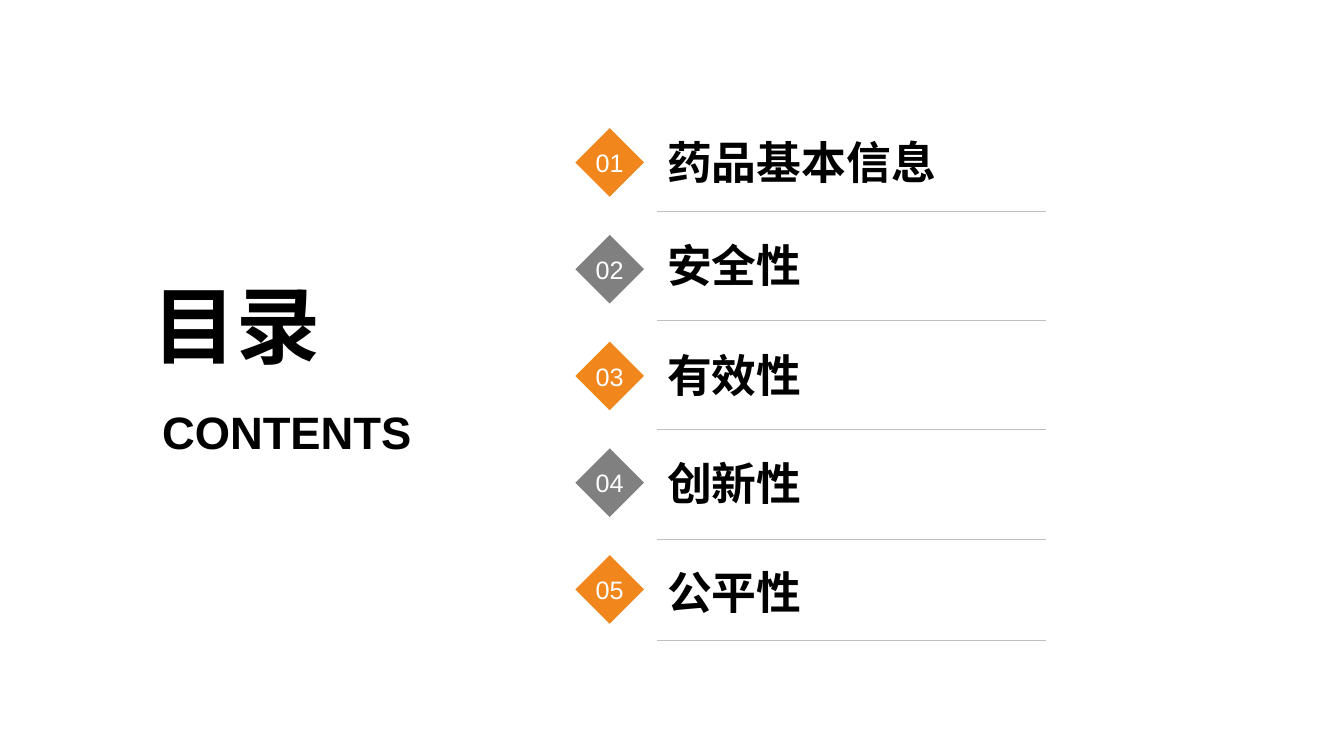
import pptx
import pptx.dml.color
import pptx.enum.shapes
import pptx.enum.text
import pptx.util
from pptx.util import Cm

ALIGN = pptx.enum.text.PP_ALIGN
ANCHOR = pptx.enum.text.MSO_ANCHOR


def color(value):
    return pptx.dml.color.RGBColor.from_string(value)


def write(shape, text, size, fill="000000", bold=True, align=ALIGN.LEFT, anchor=ANCHOR.TOP, wrap=True):
    frame = shape.text_frame
    frame.word_wrap = wrap
    frame.vertical_anchor = anchor
    paragraph = frame.paragraphs[0]
    paragraph.alignment = align
    run = paragraph.add_run()
    run.text = text
    run.font.name = "Arial"
    run.font.size = pptx.util.Pt(size)
    run.font.bold = bold
    run.font.color.rgb = color(fill)


presentation = pptx.Presentation()
presentation.slide_width = Cm(33.87)
presentation.slide_height = Cm(19.05)
slide = presentation.slides.add_slide(presentation.slide_layouts[6])

title = slide.shapes.add_textbox(Cm(3.6), Cm(6.76), Cm(6.99), Cm(2.82))
write(title, "目录", 60, align=ALIGN.JUSTIFY)
subtitle = slide.shapes.add_textbox(Cm(1.25), Cm(10.05), Cm(9.37), Cm(1.6))
write(subtitle, "CONTENTS", 32.4, align=ALIGN.RIGHT)

sections = [
    ("药品基本信息", 3.15, 5.33),
    ("安全性", 5.74, 8.08),
    ("有效性", 8.51, 10.82),
    ("创新性", 11.23, 13.59),
    ("公平性", 13.97, 16.13),
]
diamond_fills = ["F0861C", "808080"]

for index, (name, label_top, rule_y) in enumerate(sections):
    diamond = slide.shapes.add_shape(
        pptx.enum.shapes.MSO_SHAPE.DIAMOND,
        Cm(14.5), Cm(3.23 + 2.69 * index), Cm(1.73), Cm(1.73))
    diamond.shadow.inherit = False
    diamond.fill.solid()
    diamond.fill.fore_color.rgb = color(diamond_fills[index % 2])
    diamond.line.fill.background()
    frame = diamond.text_frame
    frame.margin_left = frame.margin_right = frame.margin_top = frame.margin_bottom = 0
    write(diamond, f"{index + 1:02d}", 18, fill="FFFFFF", bold=False,
          align=ALIGN.CENTER, anchor=ANCHOR.MIDDLE, wrap=False)

    label = slide.shapes.add_textbox(Cm(16.56), Cm(label_top), Cm(10.6), Cm(1.73))
    write(label, name, 32, anchor=ANCHOR.BOTTOM, wrap=False)

    rule = slide.shapes.add_connector(
        pptx.enum.shapes.MSO_CONNECTOR.STRAIGHT,
        Cm(16.56), Cm(rule_y), Cm(26.37), Cm(rule_y))
    rule.line.color.rgb = color("BFBFBF")
    rule.line.width = pptx.util.Pt(0.25)
    pptx.oxml.xmlchemy.OxmlElement("a:effectLst")
    rule._element.spPr.append(pptx.oxml.xmlchemy.OxmlElement("a:effectLst"))

presentation.save("out.pptx")
